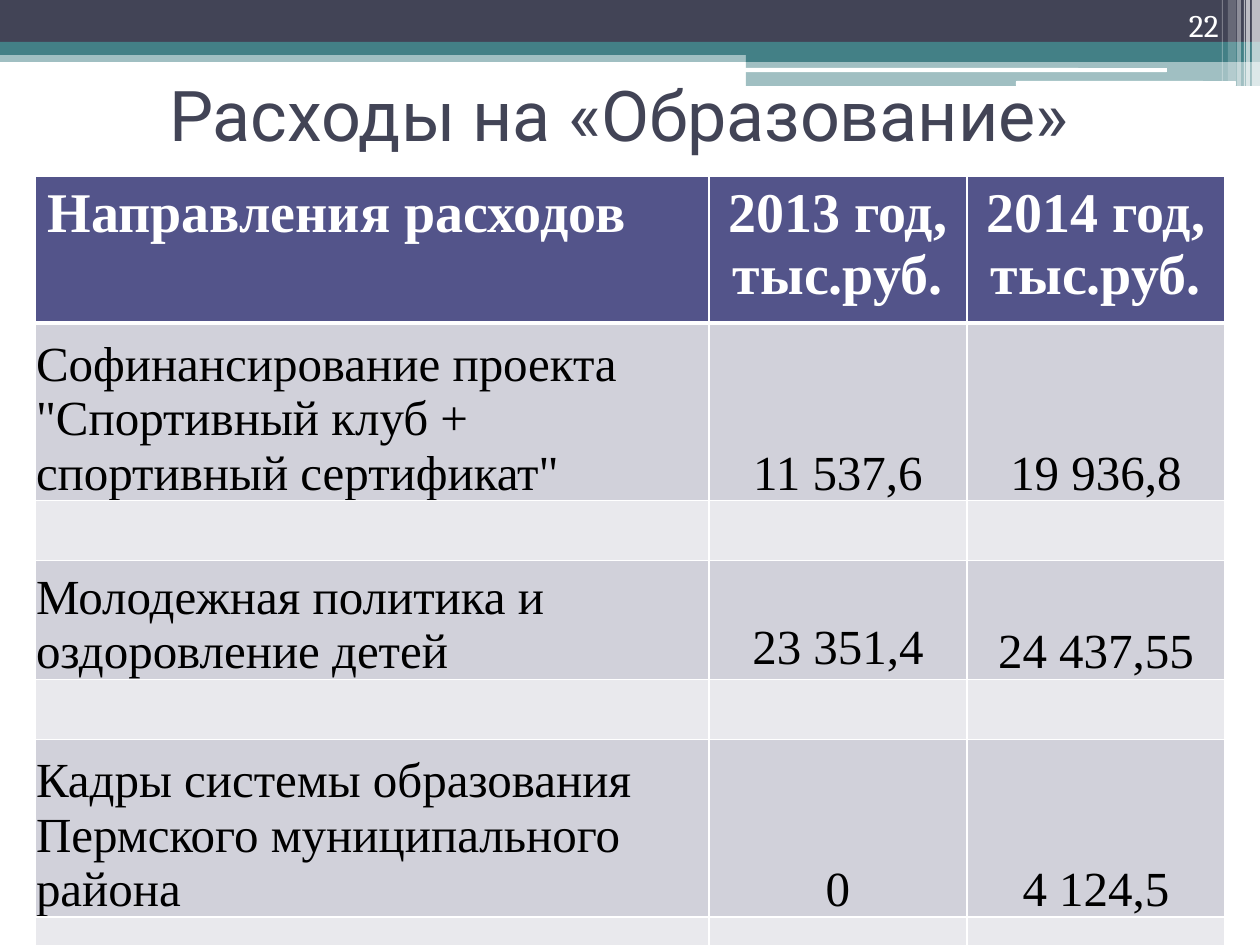
from lxml.etree import SubElement
from pptx import Presentation
from pptx.dml.color import RGBColor
from pptx.enum.shapes import MSO_SHAPE as Shape
from pptx.enum.text import MSO_ANCHOR as Anchor, PP_ALIGN as Align
from pptx.oxml.ns import qn
from pptx.util import Emu, Pt

PX = 914400 // 126
COLORS = {
    "navy": "424456", "teal": "438086", "white": "FFFFFF", "black": "000000",
    "header": "53548A", "band": "D1D1DA", "gap": "E9E9ED",
}
SERIF = "Times New Roman"

# left, top, width, height, color, opacity in percent
BANDS = [
    (0, 50, 1260, 12, "teal", 50),
    (0, 0, 1260, 42, "navy", 100),
    (0, 42, 1260, 13, "teal", 100),
    (746, 49, 514, 13, "teal", 100),
    (746, 61, 514, 25, "teal", 50),
]
ROUNDED_LINES = [(745, 68, 422, 4), (1016, 81, 220, 5)]
# left, width, height, opacity in percent
STRIPES = [
    (1252, 8, 86, 65), (1246, 4, 86, 65), (1244, 1, 86, 60),
    (1237, 4, 86, 40), (1228, 8, 81, 20), (1222, 1, 81, 30),
]

COLUMNS = [674, 258, 258]
HEADERS = ["Направления расходов", "2013 год, тыс.руб.", "2014 год, тыс.руб."]
# height and texts of each expense, height of the gap row under it
EXPENSES = [
    (176, ['Софинансирование проекта "Спортивный клуб + спортивный сертификат"',
           "11 537,6", "19 936,8"], 60),
    (118, ["Молодежная политика и оздоровление детей",
           "23 351,4", "24 437,55"], 60),
    (177, ["Кадры системы образования Пермского муниципального района",
           "0", "4 124,5"], 45),
]
HEADER_HEIGHT = 136


def px(*lengths):
    return [Emu(length * PX) for length in lengths]


def rgb(color):
    return RGBColor.from_string(COLORS[color])


def add_block(page, left, top, width, height, color, opacity=100, kind=Shape.RECTANGLE):
    block = page.shapes.add_shape(kind, *px(left, top, width, height))
    block.shadow.inherit = False
    block.line.fill.background()
    block.fill.solid()
    block.fill.fore_color.rgb = rgb(color)
    if opacity < 100:
        tint = block.fill._xPr.find(".//" + qn("a:srgbClr"))
        SubElement(tint, qn("a:alpha"), val=str(opacity * 1000))


def write_text(frame, text, size, font, color, align=Align.LEFT, bold=False):
    para = frame.paragraphs[0]
    para.alignment = align
    span = para.add_run()
    span.text = text
    span.font.size = Pt(size)
    span.font.name = font
    span.font.bold = bold
    span.font.color.rgb = rgb(color)


def add_text(page, left, top, width, height, text, anchor, **style):
    box = page.shapes.add_textbox(*px(left, top, width, height))
    box.text_frame.word_wrap = True
    box.text_frame.vertical_anchor = anchor
    write_text(box.text_frame, text, **style)


def set_borders(cell, top=1, bottom=1):
    widths = {"lnL": 1, "lnR": 1, "lnT": top, "lnB": bottom}
    for side, width in widths.items():
        line = SubElement(cell._tc.get_or_add_tcPr(), qn("a:" + side), w=str(Pt(width)))
        fill = SubElement(line, qn("a:solidFill"))
        SubElement(fill, qn("a:srgbClr"), val=COLORS["white"])


def format_cell(cell, color, top=1, bottom=1):
    set_borders(cell, top, bottom)
    cell.fill.solid()
    cell.fill.fore_color.rgb = rgb(color)


def set_margins(cell, bottom=0):
    cell.margin_left = cell.margin_right = cell.margin_top = Emu(PX)
    cell.margin_bottom = Emu(bottom * PX)


def column_align(column):
    return Align.CENTER if column else Align.LEFT


def add_expense_table(page, left, top):
    heights = [HEADER_HEIGHT]
    for height, _, gap in EXPENSES:
        heights += [height, gap]
    frame = page.shapes.add_table(
        len(heights), len(COLUMNS), *px(left, top, sum(COLUMNS), sum(heights)))
    table = frame.table
    table.horz_banding = False
    for column, width in zip(table.columns, COLUMNS):
        column.width = Emu(width * PX)
    for row, height in zip(table.rows, heights):
        row.height = Emu(height * PX)

    # Header row
    for column, text in enumerate(HEADERS):
        cell = table.cell(0, column)
        format_cell(cell, "header", bottom=3)
        write_text(cell.text_frame, text, 32, SERIF, "white",
                   column_align(column), bold=True)

    # Expense rows, each with an empty row under it
    for index, (_, texts, _) in enumerate(EXPENSES):
        row = 2 * index + 1
        for column, text in enumerate(texts):
            cell = table.cell(row, column)
            format_cell(cell, "band", top=3 if row == 1 else 1)
            set_margins(cell, bottom=4 if text == "23 351,4" else 0)
            cell.vertical_anchor = Anchor.BOTTOM
            write_text(cell.text_frame, text, 28, SERIF, "black", column_align(column))
            gap_cell = table.cell(row + 1, column)
            format_cell(gap_cell, "gap")
            set_margins(gap_cell)


def main():
    deck = Presentation()
    deck.slide_width, deck.slide_height = px(1260, 945)
    page = deck.slides.add_slide(deck.slide_layouts[6])

    # Top decoration
    for band in BANDS:
        add_block(page, *band)
    for line in ROUNDED_LINES:
        add_block(page, *line, "white", kind=Shape.ROUNDED_RECTANGLE)
    for left, width, height, opacity in STRIPES:
        add_block(page, left, 0, width, height, "white", opacity)

    # Title, table and page number
    add_text(page, 59, 61, 1120, 105, "Расходы на «Образование»", Anchor.MIDDLE,
             size=40, font="Roboto", color="navy", align=Align.CENTER)
    add_expense_table(page, 35, 176)
    add_text(page, 1126, 0, 105, 50, "22", Anchor.BOTTOM,
             size=18, font="Cambria", color="white", align=Align.RIGHT)

    deck.save("out.pptx")


if __name__ == "__main__":
    main()
